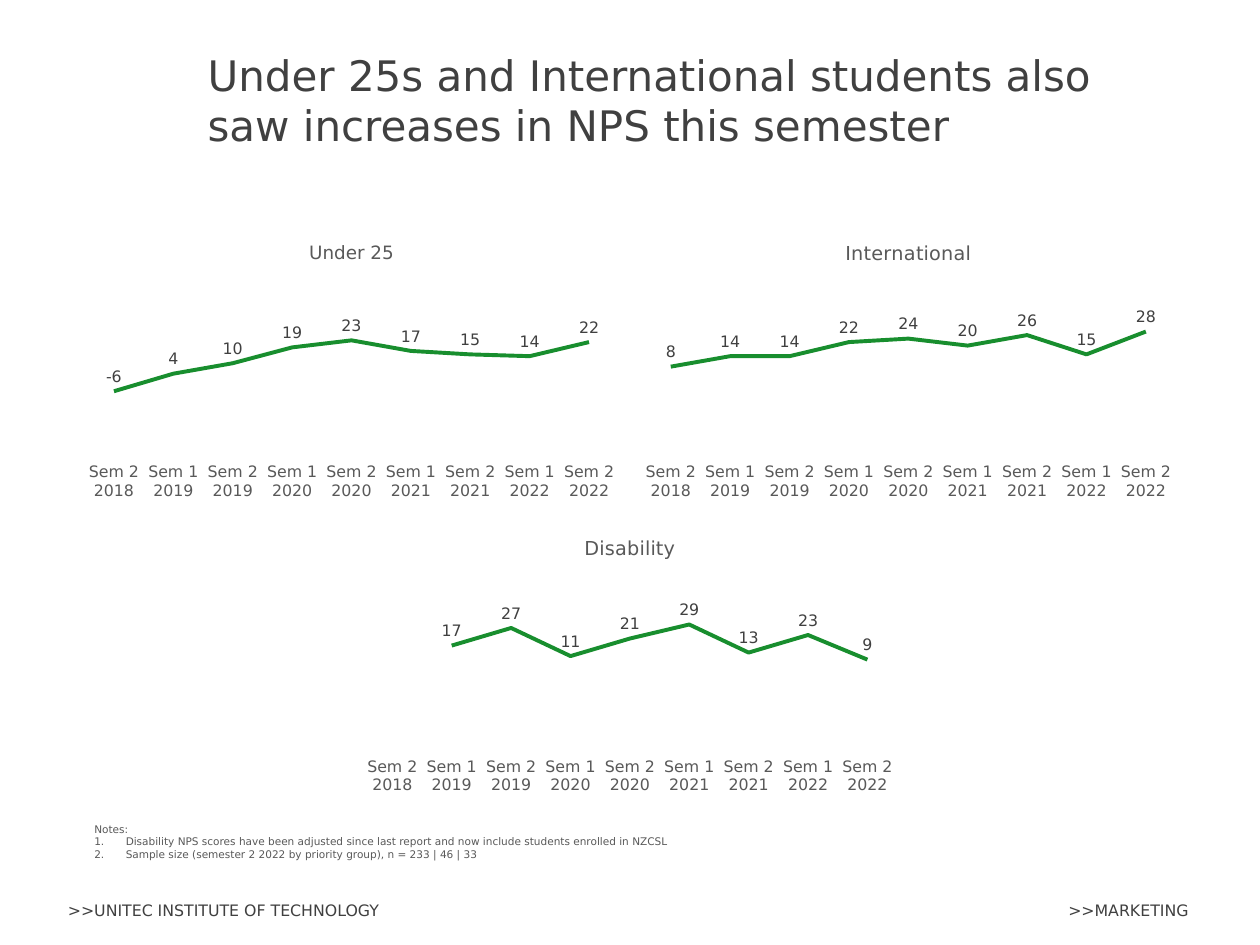
from lxml.etree import SubElement
from pptx import Presentation
from pptx.chart.data import CategoryChartData
from pptx.dml.color import RGBColor
from pptx.enum.chart import XL_CHART_TYPE, XL_LABEL_POSITION, XL_TICK_LABEL_POSITION, XL_TICK_MARK
from pptx.enum.text import MSO_ANCHOR, PP_ALIGN
from pptx.oxml import parse_xml
from pptx.oxml.ns import nsdecls, qn
from pptx.util import Pt

COLORS = {"dark": "404040", "grey": "595959", "green": "188E2E"}
FONT = "DejaVu Sans"


def style(font, size, color):
    font.name = FONT
    font.size = Pt(size)
    font.bold = False
    font.color.rgb = RGBColor.from_string(COLORS[color])


def add_text(left, top, width, height, lines, size, color, anchor=MSO_ANCHOR.TOP, align=PP_ALIGN.LEFT):
    box = page.shapes.add_textbox(Pt(left), Pt(top), Pt(width), Pt(height))
    frame = box.text_frame
    frame.word_wrap = True
    frame.vertical_anchor = anchor
    frame.text = "\n".join(lines)
    for para in frame.paragraphs:
        para.alignment = align
        for span in para.runs:
            style(span.font, size, color)
    return frame


deck = Presentation()
deck.slide_width, deck.slide_height = Pt(720), Pt(540)
page = deck.slides.add_slide(deck.slide_layouts[6])

add_text(111.6, 36.7, 566.6, 40.3,
         ["Under 25s and International students also saw increases in NPS this semester"],
         24, "dark", MSO_ANCHOR.MIDDLE)

semesters = ["Sem 2 2018"] + [
    f"Sem {half} {year}" for year in range(2019, 2023) for half in (1, 2)
]
charts = [
    ("Under 25", 10.5, 41.8, 128.2, [-6, 4, 10, 19, 23, 17, 15, 14, 22]),
    ("International", 11, 360, 128.2, [8, 14, 14, 22, 24, 20, 26, 15, 28]),
    ("Disability", 11, 200.9, 296.6, [None, 17, 27, 11, 21, 29, 13, 23, 9]),
]

for name, title_size, left, top, scores in charts:
    data = CategoryChartData(number_format="0")
    data.categories = semesters
    data.add_series(name, scores)
    chart = page.shapes.add_chart(
        XL_CHART_TYPE.LINE, Pt(left), Pt(top), Pt(318.2), Pt(162), data
    ).chart
    style(chart.font, 8, "grey")
    chart.has_legend = False
    chart.has_title = True
    chart.chart_title.text_frame.text = name
    style(chart.chart_title.text_frame.paragraphs[0].runs[0].font, title_size, "grey")
    chart.chart_title.include_in_layout = False

    for axis in (chart.category_axis, chart.value_axis):
        axis.has_major_gridlines = False
        axis.major_tick_mark = axis.minor_tick_mark = XL_TICK_MARK.NONE
        axis.format.line.fill.background()
    chart.category_axis.tick_label_position = XL_TICK_LABEL_POSITION.LOW
    style(chart.category_axis.tick_labels.font, 9, "grey")
    chart.value_axis.tick_label_position = XL_TICK_LABEL_POSITION.NONE
    chart.value_axis.minimum_scale = -40
    chart.value_axis.maximum_scale = 60

    plot = chart.plots[0]
    plot.vary_by_categories = False
    series = plot.series[0]
    series.smooth = False
    series.format.line.width = Pt(2.25)
    series.format.line.color.rgb = RGBColor.from_string(COLORS["green"])
    labels = series.data_labels
    labels.show_value = True
    labels.position = XL_LABEL_POSITION.ABOVE
    labels.number_format = "0"
    labels.number_format_is_linked = False
    style(labels.font, 9, "dark")

    plot_area = chart.element.find(".//" + qn("c:plotArea"))
    for old_layout in plot_area.findall(qn("c:layout")):
        plot_area.remove(old_layout)
    layout = parse_xml(f"<c:layout {nsdecls('c')}/>")
    manual = SubElement(layout, qn("c:manualLayout"))
    for tag, value in (("layoutTarget", "inner"), ("xMode", "edge"), ("yMode", "edge"),
                       ("x", "0.02"), ("y", "0.18"), ("w", "0.96"), ("h", "0.62")):
        SubElement(manual, qn(f"c:{tag}")).set("val", value)
    plot_area.insert(0, layout)

notes = add_text(46.8, 466.6, 456.5, 19.4, [
    "Notes:",
    "Disability NPS scores have been adjusted since last report and now include students enrolled in NZCSL",
    "Sample size (semester 2 2022 by priority group), n = 233 | 46 | 33",
], 6, "grey")
for para in notes.paragraphs[1:]:
    properties = para._p.get_or_add_pPr()
    properties.set("marL", str(Pt(18)))
    properties.set("indent", str(Pt(-18)))
    SubElement(properties, qn("a:buFont")).set("typeface", "+mj-lt")
    SubElement(properties, qn("a:buAutoNum")).set("type", "arabicPeriod")

add_text(31.7, 511.2, 293, 18, [">>UNITEC INSTITUTE OF TECHNOLOGY"], 9, "dark")
add_text(387.4, 511.2, 298.8, 18, [">>MARKETING"], 9, "dark", MSO_ANCHOR.MIDDLE, PP_ALIGN.RIGHT)

deck.save("out.pptx")
